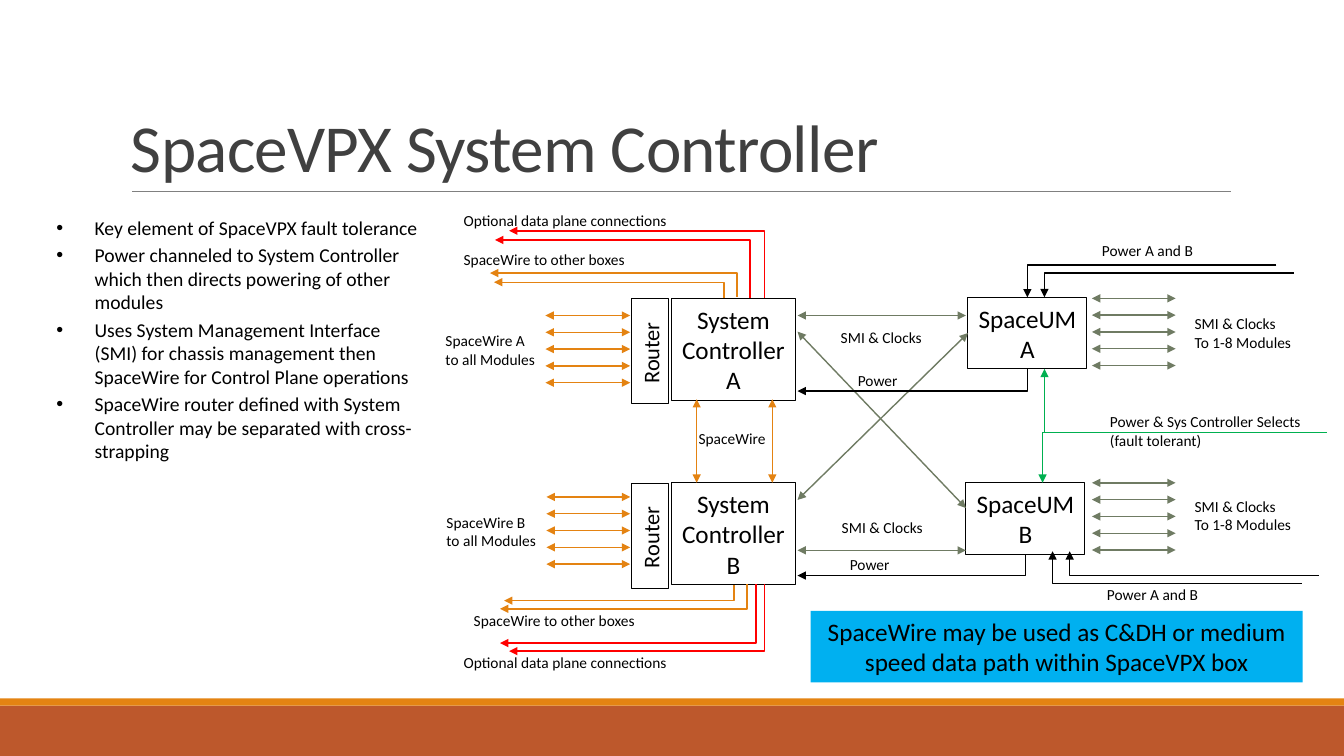
from dataclasses import dataclass
from typing import Any, Optional

import lxml.etree
import pptx
import pptx.dml.color
import pptx.enum.shapes
import pptx.enum.text
import pptx.oxml.ns
import pptx.util

Inches = pptx.util.Inches
Pt = pptx.util.Pt
qn = pptx.oxml.ns.qn
Align = pptx.enum.text.PP_ALIGN
Anchor = pptx.enum.text.MSO_ANCHOR
Connector = pptx.enum.shapes.MSO_CONNECTOR

COLORS = {
    "black": "000000", "title": "404040", "rule": "808080", "footer": "BD582C",
    "orange": "E48312", "olive": "6F7B63", "green": "00B050", "red": "FF0000",
    "callout": "00B0F0",
}
FONT = "Calibri"
FAN_COUNT, FAN_PITCH = 5, 1 / 6


@dataclass
class Box:
    left: float
    top: float
    width: float
    height: float
    text: str = ""
    size: float = 18
    fill: Optional[str] = None
    line: Optional[str] = "black"
    rotation: float = 0
    align: Any = Align.CENTER
    indent: float = 0.1
    wrap: bool = False


@dataclass
class Label:
    left: float
    top: float
    width: float
    text: str


@dataclass
class Arrow:
    x1: float
    y1: float
    x2: float
    y2: float
    color: str


@dataclass
class Fan:
    left: float
    right: float
    top: float
    color: str


@dataclass
class Elbow:
    """A level leg from (x, y), then an upright leg to (corner_x, end_y)."""
    x: float
    y: float
    corner_x: float
    end_y: float
    color: str
    arrow_on_level: bool = True


def rgb(name: str) -> pptx.dml.color.RGBColor:
    return pptx.dml.color.RGBColor.from_string(COLORS[name])


def write(frame: Any, text: str, *, size: float, color: str = "black", align: Any = Align.LEFT,
          anchor: Any = Anchor.TOP, wrap: bool = False, line_spacing: Optional[float] = None,
          space_before: float = 0, tracking: int = 0, bullet: str = "", hanging: float = 0) -> None:
    frame.word_wrap = wrap
    frame.vertical_anchor = anchor
    for index, words in enumerate(text.split("\n")):
        para = frame.add_paragraph() if index else frame.paragraphs[0]
        para.alignment = align
        para.space_before = Pt(space_before)
        para.line_spacing = line_spacing
        span = para.add_run()
        span.text = words
        span.font.name, span.font.size = FONT, Pt(size)
        span.font.color.rgb = rgb(color)
        if tracking:
            span.font._element.set("spc", str(tracking))
        if bullet:
            properties = para._p.get_or_add_pPr()
            properties.set("marL", str(Inches(hanging)))
            properties.set("indent", str(-Inches(hanging)))
            lxml.etree.SubElement(properties, qn("a:buFont")).set("typeface", "Arial")
            lxml.etree.SubElement(properties, qn("a:buChar")).set("char", bullet)


def add_text(page: Any, left: float, top: float, width: float, height: float,
             text: str, **style: Any) -> None:
    area = page.shapes.add_textbox(Inches(left), Inches(top), Inches(width), Inches(height))
    write(area.text_frame, text, **style)


def add_box(page: Any, box: Box) -> Any:
    shape = page.shapes.add_shape(pptx.enum.shapes.MSO_SHAPE.RECTANGLE, Inches(box.left),
                                  Inches(box.top), Inches(box.width), Inches(box.height))
    shape.shadow.inherit = False
    shape.rotation = box.rotation
    if box.fill:
        shape.fill.solid()
        shape.fill.fore_color.rgb = rgb(box.fill)
    else:
        shape.fill.background()
    if box.line:
        shape.line.color.rgb = rgb(box.line)
        shape.line.width = Pt(0.75)
    else:
        shape.line.fill.background()
    if box.text:
        shape.text_frame.margin_left = Inches(box.indent)
        write(shape.text_frame, box.text, size=box.size, align=box.align,
              anchor=Anchor.MIDDLE, wrap=box.wrap)
    return shape


def add_line(page: Any, kind: Any, x1: float, y1: float, x2: float, y2: float, color: str,
             *, width: float = 1, head: bool = False, tail: bool = False) -> Any:
    line = page.shapes.add_connector(kind, Inches(x1), Inches(y1), Inches(x2), Inches(y2))
    line.line.color.rgb = rgb(color)
    line.line.width = Pt(width)
    properties = line._element.spPr
    outline = properties.find(qn("a:ln"))
    for tag, shown in (("a:headEnd", head), ("a:tailEnd", tail)):
        if shown:
            lxml.etree.SubElement(outline, qn(tag)).set("type", "triangle")
    lxml.etree.SubElement(properties, qn("a:effectLst"))
    return line


def add_arrow(page: Any, arrow: Arrow) -> Any:
    return add_line(page, Connector.STRAIGHT, arrow.x1, arrow.y1, arrow.x2, arrow.y2,
                    arrow.color, head=True, tail=True)


def add_fan(page: Any, fan: Fan) -> None:
    for row in range(FAN_COUNT):
        y = fan.top + row * FAN_PITCH
        add_arrow(page, Arrow(fan.right, y, fan.left, y, fan.color))


def add_elbow(page: Any, elbow: Elbow) -> None:
    line = add_line(page, Connector.ELBOW, elbow.x, elbow.y, elbow.corner_x, elbow.end_y,
                    elbow.color, head=elbow.arrow_on_level, tail=not elbow.arrow_on_level)
    line._element.spPr.find(qn("a:prstGeom")).set("prst", "bentConnector2")


CONTROLLERS = [Box(6.66, top, 1.23, 1.01, f"System\nController\n{side}")
               for side, top in (("A", 2.96), ("B", 4.79))]
ROUTERS = [Box(5.93, top, 1.04, 0.37, "Router", size=16, rotation=270, align=Align.LEFT,
               indent=0.2, wrap=True) for top in (3.3, 5.13)]
SPACEUM_A = Box(9.6, 2.95, 1.18, 0.71, "SpaceUM\nA")
SPACEUM_B = Box(9.58, 4.79, 1.18, 0.71, "SpaceUM\nB")
CALLOUT = Box(8.04, 6.06, 4.88, 0.71, "SpaceWire may be used as C&DH or medium speed data path "
              "within SpaceVPX box", fill="callout", line=None, wrap=True)
FOOTER = [Box(0, 7, 13.33, 0.5, fill="footer", line=None),
          Box(0, 6.93, 13.33, 0.07, fill="orange", line=None)]

FANS = [Fan(5.41, 6.25, 3.13, "orange"), Fan(5.42, 6.25, 4.93, "orange"),
        Fan(10.83, 11.66, 2.96, "olive"), Fan(10.83, 11.66, 4.79, "olive")]
ARROWS = [
    Arrow(6.91, 3.96, 6.91, 4.79, "orange"), Arrow(7.66, 3.96, 7.66, 4.79, "orange"),
    Arrow(9.58, 3.13, 7.91, 3.13, "olive"), Arrow(9.58, 5.46, 7.91, 5.46, "olive"),
    Arrow(9.58, 5.04, 7.91, 3.29, "olive"),
]
CROSS_STRAP = Arrow(9.6, 3.3, 7.91, 4.96, "olive")
ELBOWS = [
    Elbow(7.91, 3.88, 10.19, 3.66, "black"), Elbow(7.91, 5.71, 10.17, 5.5, "black"),
    Elbow(12.66, 2.63, 10.19, 2.95, "black", False),
    Elbow(12.83, 2.71, 10.36, 2.95, "black", False),
    Elbow(12.91, 5.79, 10.44, 5.47, "black", False),
    Elbow(13.08, 5.71, 10.61, 5.47, "black", False),
    Elbow(13.13, 4.29, 10.36, 3.66, "green", False),
    Elbow(13.16, 4.29, 10.34, 4.79, "green", False),
    Elbow(5, 5.96, 7.28, 5.8, "orange"), Elbow(4.96, 6.04, 7.41, 5.79, "orange"),
    Elbow(4.9, 2.8, 7.18, 2.96, "orange"), Elbow(4.86, 2.71, 7.31, 2.95, "orange"),
    Elbow(4.91, 2.38, 7.44, 2.96, "red"), Elbow(5.05, 2.29, 7.58, 2.96, "red"),
    Elbow(4.96, 6.38, 7.5, 5.79, "red"), Elbow(5.05, 6.46, 7.58, 5.79, "red"),
]
LABELS = [
    Label(6.83, 4.21, 0.87, "SpaceWire"),
    Label(4.32, 3.24, 1.09, "SpaceWire A\nto all Modules"),
    Label(4.33, 5.04, 1.09, "SpaceWire B\nto all Modules"),
    Label(8.24, 3.21, 1.01, "SMI & Clocks"), Label(8.25, 5.09, 1.01, "SMI & Clocks"),
    Label(8.41, 3.63, 0.6, "Power"), Label(8.33, 5.46, 0.6, "Power"),
    Label(11.75, 3.07, 1.18, "SMI & Clocks\nTo 1-8 Modules"),
    Label(11.75, 4.88, 1.18, "SMI & Clocks\nTo 1-8 Modules"),
    Label(10.83, 2.34, 1.12, "Power A and B"), Label(10.88, 5.76, 1.12, "Power A and B"),
    Label(10.91, 4.04, 2.11, "Power & Sys Controller Selects\n(fault tolerant)"),
    Label(4.5, 2.43, 1.82, "SpaceWire to other boxes"),
    Label(4.6, 6.01, 1.82, "SpaceWire to other boxes"),
    Label(4.5, 2.04, 2.23, "Optional data plane connections"),
    Label(4.5, 6.43, 2.23, "Optional data plane connections"),
]
KEY_POINTS = "\n".join([
    "Key element of SpaceVPX fault tolerance",
    "Power channeled to System Controller which then directs powering of other modules",
    "Uses System Management Interface (SMI) for chassis management then SpaceWire "
    "for Control Plane operations",
    "SpaceWire router defined with System Controller may be separated with cross-strapping",
])


def main() -> None:
    deck = pptx.Presentation()
    deck.slide_width, deck.slide_height = Inches(13.33), Inches(7.5)
    page = deck.slides.add_slide(deck.slide_layouts[6])

    # Footer bands, title and key points
    for band in FOOTER:
        add_box(page, band)
    add_line(page, Connector.STRAIGHT, 1.31, 1.9, 12.21, 1.9, "rule", width=0.5)
    add_text(page, 1.2, 0.31, 11, 1.59, "SpaceVPX System Controller", size=48, color="title",
             anchor=Anchor.BOTTOM, wrap=True, line_spacing=0.85, tracking=-50)
    add_text(page, 0.46, 2.09, 3.88, 4.5, KEY_POINTS, size=14, wrap=True, space_before=2.8,
             bullet="•", hanging=0.38)

    # Diagram boxes
    for box in [*CONTROLLERS, *ROUTERS, SPACEUM_B, CALLOUT]:
        add_box(page, box)
    spaceum_a = add_box(page, SPACEUM_A)

    # Connections
    for fan in FANS:
        add_fan(page, fan)
    for arrow in ARROWS:
        add_arrow(page, arrow)
    add_arrow(page, CROSS_STRAP).begin_connect(spaceum_a, 1)
    for elbow in ELBOWS:
        add_elbow(page, elbow)

    # Labels
    for label in LABELS:
        height = 0.47 if "\n" in label.text else 0.29
        add_text(page, label.left, label.top, label.width, height, label.text, size=11)

    deck.save("out.pptx")


if __name__ == "__main__":
    main()
